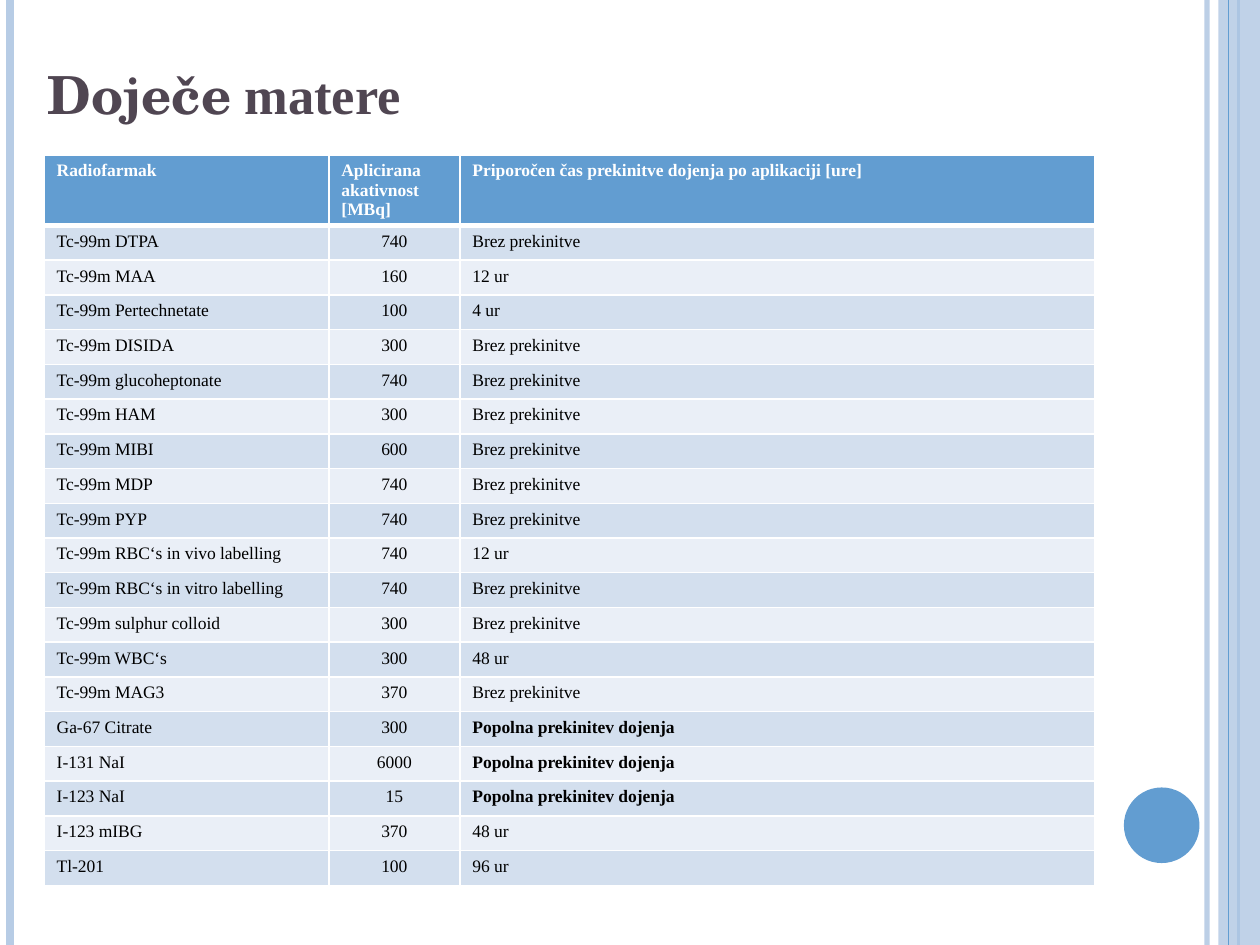
from pptx import Presentation
from pptx.dml.color import RGBColor
from pptx.enum.shapes import MSO_CONNECTOR, MSO_SHAPE
from pptx.enum.text import MSO_AUTO_SIZE, PP_ALIGN
from pptx.oxml.ns import qn
from pptx.util import Inches, Pt
from lxml.etree import SubElement

BLUE, PALE_BLUE, WHITE, BLACK = "629DD1", "B7CCE5", "FFFFFF", "000000"
BANDS = ("D3DFEE", "EAEFF7")
SERIF = "Times New Roman"
TITLE_COLOR = "504652"
TITLE = [("Doječe", "TeX Gyre Schola"), (" matere", SERIF)]

HEADER = ("Radiofarmak", "Aplicirana akativnost [MBq]",
          "Priporočen čas prekinitve dojenja po aplikaciji [ure]")
NO_BREAK, FULL_STOP = "Brez prekinitve", "Popolna prekinitev dojenja"
ROWS = [
    ("Tc-99m DTPA", "740", NO_BREAK),
    ("Tc-99m MAA", "160", "12 ur"),
    ("Tc-99m Pertechnetate", "100", "4 ur"),
    ("Tc-99m DISIDA", "300", NO_BREAK),
    ("Tc-99m glucoheptonate", "740", NO_BREAK),
    ("Tc-99m HAM", "300", NO_BREAK),
    ("Tc-99m MIBI", "600", NO_BREAK),
    ("Tc-99m MDP", "740", NO_BREAK),
    ("Tc-99m PYP", "740", NO_BREAK),
    ("Tc-99m RBC‘s in vivo labelling", "740", "12 ur"),
    ("Tc-99m RBC‘s in vitro labelling", "740", NO_BREAK),
    ("Tc-99m sulphur colloid", "300", NO_BREAK),
    ("Tc-99m WBC‘s", "300", "48 ur"),
    ("Tc-99m MAG3", "370", NO_BREAK),
    ("Ga-67 Citrate", "300", FULL_STOP),
    ("I-131 NaI", "6000", FULL_STOP),
    ("I-123 NaI", "15", FULL_STOP),
    ("I-123 mIBG", "370", "48 ur"),
    ("Tl-201", "100", "96 ur"),
]
COLUMN_WIDTHS = (2.26, 1.04, 5.04)
TABLE_LEFT, TABLE_TOP, TABLE_BOTTOM, HEADER_HEIGHT = 0.35, 1.23, 7.02, 0.55


def rgb(value):
    return RGBColor.from_string(value)


def set_opacity(shape, percent):
    for color in shape._element.spPr.iter(qn("a:srgbClr")):
        SubElement(color, qn("a:alpha"), val=str(percent * 1000))


def add_stripe(page, x, color, width, opacity=100):
    """Draw a vertical line over the full height of the slide."""
    stripe = page.shapes.add_connector(
        MSO_CONNECTOR.STRAIGHT, Inches(x), 0, Inches(x), Inches(7.5))
    stripe.line.color.rgb = rgb(color)
    stripe.line.width = Pt(width)
    if opacity < 100:
        set_opacity(stripe, opacity)
    SubElement(stripe._element.spPr, qn("a:effectLst"))


def add_plain_shape(page, kind, color, *place):
    shape = page.shapes.add_shape(kind, *map(Inches, place))
    shape.shadow.inherit = False
    shape.fill.solid()
    shape.fill.fore_color.rgb = rgb(color)
    shape.line.fill.background()
    return shape


def add_span(para, text, font, size, color, bold):
    span = para.add_run()
    span.text = text
    span.font.name = font
    span.font.size = Pt(size)
    span.font.color.rgb = rgb(color)
    span.font.bold = bold


def set_borders(cell, widths):
    """Give white borders; widths are for left, right, top, bottom."""
    properties = cell._tc.get_or_add_tcPr()
    for side, width in zip("LRTB", widths):
        border = SubElement(properties, qn(f"a:ln{side}"), w=str(Pt(width)))
        fill = SubElement(border, qn("a:solidFill"))
        SubElement(fill, qn("a:srgbClr"), val=WHITE)


def add_table(page):
    row_height = (TABLE_BOTTOM - TABLE_TOP - HEADER_HEIGHT) / len(ROWS)
    table = page.shapes.add_table(
        len(ROWS) + 1, len(HEADER), Inches(TABLE_LEFT), Inches(TABLE_TOP),
        Inches(sum(COLUMN_WIDTHS)), Inches(TABLE_BOTTOM - TABLE_TOP)).table
    for column, width in zip(table.columns, COLUMN_WIDTHS):
        column.width = Inches(width)
    for r, texts in enumerate([HEADER] + ROWS):
        is_header = r == 0
        table.rows[r].height = Inches(HEADER_HEIGHT if is_header else row_height)
        for c, text in enumerate(texts):
            cell = table.cell(r, c)
            set_borders(cell, (1, 1, 3 if r == 1 else 1, 3 if is_header else 1))
            cell.fill.solid()
            cell.fill.fore_color.rgb = rgb(BLUE if is_header else BANDS[(r - 1) % 2])
            para = cell.text_frame.paragraphs[0]
            if c == 1 and not is_header:
                para.alignment = PP_ALIGN.CENTER
            add_span(para, text, SERIF, 10, WHITE if is_header else BLACK,
                     is_header or text == FULL_STOP)


def add_title(page):
    box = page.shapes.add_textbox(*map(Inches, (0.28, 0.44, 3.04, 0.61)))
    box.text_frame.word_wrap = False
    box.text_frame.auto_size = MSO_AUTO_SIZE.SHAPE_TO_FIT_TEXT
    for text, font in TITLE:
        add_span(box.text_frame.paragraphs[0], text, font, 30, TITLE_COLOR, True)


def main():
    deck = Presentation()
    deck.slide_width, deck.slide_height = Inches(10), Inches(7.5)
    page = deck.slides.add_slide(deck.slide_layouts[6])
    add_stripe(page, 9.58, PALE_BLUE, 3, 93)
    add_stripe(page, 0.08, PALE_BLUE, 4.5)
    add_stripe(page, 9.83, BLUE, 1.5)
    band = add_plain_shape(page, MSO_SHAPE.RECTANGLE, PALE_BLUE, 9.67, 0, 0.33, 7.5)
    set_opacity(band, 87)
    add_stripe(page, 9.75, BLUE, 0.75)
    add_plain_shape(page, MSO_SHAPE.OVAL, BLUE, 8.92, 6.25, 0.6, 0.6)
    add_table(page)
    add_title(page)
    deck.save("out.pptx")


if __name__ == "__main__":
    main()
